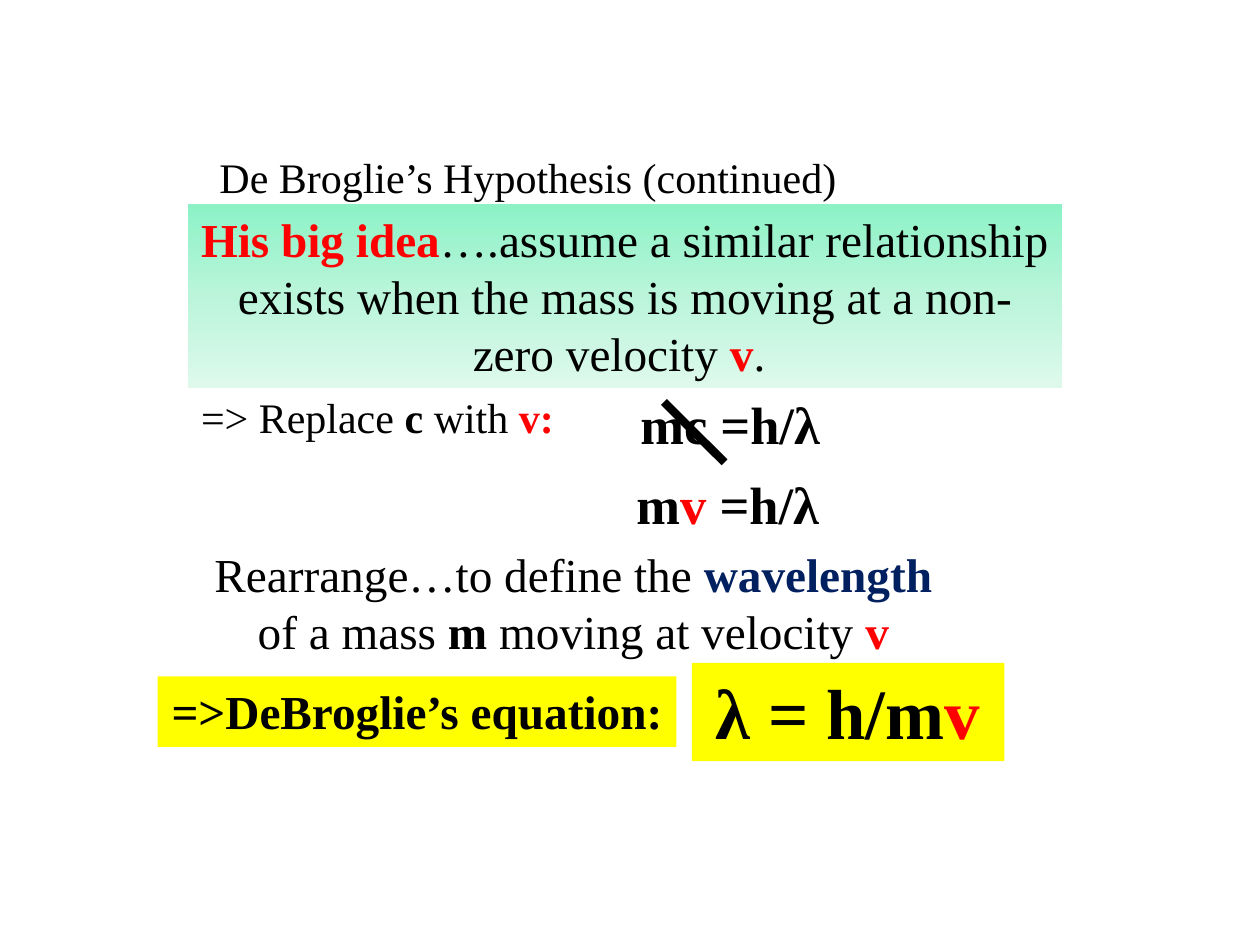
import copy
import pptx
import pptx.util
import pptx.dml.color
import pptx.enum.shapes
import pptx.enum.text
import pptx.oxml.ns
import lxml.etree

Pt = pptx.util.Pt
qn = pptx.oxml.ns.qn
BLACK, RED, NAVY, YELLOW = "000000", "FF0000", "002060", "FFFF00"


def hue(code):
    return pptx.dml.color.RGBColor.from_string(code)


def write(shape, size, parts, wrap=True):
    frame = shape.text_frame
    frame.word_wrap = wrap
    frame.auto_size = pptx.enum.text.MSO_AUTO_SIZE.SHAPE_TO_FIT_TEXT
    frame.vertical_anchor = pptx.enum.text.MSO_ANCHOR.TOP
    para = frame.paragraphs[0]
    para.alignment = pptx.enum.text.PP_ALIGN.CENTER
    for text, bold, color in parts:
        run = para.add_run()
        run.text = text
        run.font.name = "Times New Roman"
        run.font.size = Pt(size)
        run.font.bold = bold
        run.font.color.rgb = hue(color)


deck = pptx.Presentation()
deck.slide_width, deck.slide_height = Pt(720), Pt(540)
slide = deck.slides.add_slide(deck.slide_layouts[5])
shapes = slide.shapes

# Title
title = shapes.title
title.left, title.top, title.width, title.height = Pt(90), Pt(82.8), Pt(423.4), Pt(36)
write(title, 24, [("De Broglie’s Hypothesis (continued)", False, BLACK)])

# Filled panels: place, fill (None for the gradient), size, text
panels = [
    ((107.3, 116.8, 499.7, 105), None, 27, [
        ("His big idea", True, RED),
        ("….assume a similar relationship exists when the mass is moving at a non-zero velocity ",
         False, BLACK),
        ("v", True, RED), (". ", False, BLACK)]),
    ((395.3, 378.8, 178.6, 56.2), YELLOW, 40.5, [
        ("λ = h/m", True, BLACK), ("v", True, RED)]),
    ((90, 386.6, 296.6, 40.3), YELLOW, 27, [
        ("=>DeBroglie’s equation:", True, BLACK)]),
]
for place, color, size, parts in panels:
    panel = shapes.add_shape(pptx.enum.shapes.MSO_SHAPE.RECTANGLE, *map(Pt, place))
    panel.shadow.inherit = False
    panel.line.fill.background()
    if color:
        panel.fill.solid()
        panel.fill.fore_color.rgb = hue(color)
    else:
        panel.fill.gradient()
        panel.fill.gradient_angle = 270
        # A third stop sits between the two default ones
        first = next(panel._element.iter(qn("a:gs")))
        first.addnext(copy.deepcopy(first))
        stops = panel.fill.gradient_stops
        for stop, spot, shade in zip(stops, (0, 0.5, 1), ("8CF2C6", "BAF5DA", "DEF9EC")):
            stop.position = spot
            stop.color.rgb = hue(shade)
    write(panel, size, parts)

# Plain text: place, size, wrap, text
notes = [
    ((350.6, 220.3, 126.7, 43.9), 30, False, [
        (" ", True, BLACK), ("mc =h/λ", True, BLACK)]),
    ((106.6, 220.3, 218.2, 36), 24, True, [
        ("=> Replace ", False, BLACK), ("c", True, BLACK),
        (" with ", False, BLACK), ("v:", True, RED)]),
    ((355, 266.4, 121.7, 43.9), 30, False, [
        ("m", True, BLACK), ("v", True, RED), (" =h/λ", True, BLACK)]),
    ((107.3, 308.2, 440.6, 72.7), 27, True, [
        ("Rearrange…to define the ", False, BLACK), ("wavelength ", True, NAVY),
        ("of a mass ", False, BLACK), ("m", True, BLACK),
        (" moving at velocity ", False, BLACK), ("v", True, RED)]),
]
for place, size, wrap, parts in notes:
    note = shapes.add_textbox(*map(Pt, place))
    write(note, size, parts, wrap)
    if not wrap:
        note.text_frame.paragraphs[0].runs[0].font.size = Pt(27 if parts[0][0] == " " else size)

# Stroke through the old speed c
slash = shapes.add_connector(pptx.enum.shapes.MSO_CONNECTOR.STRAIGHT,
                             Pt(379.4), Pt(229.7), Pt(414), Pt(264.2))
slash.line.color.rgb = hue(BLACK)
slash.line.width = Pt(4.75)
lxml.etree.SubElement(slash._element.spPr, qn("a:effectLst"))

deck.save("out.pptx")
